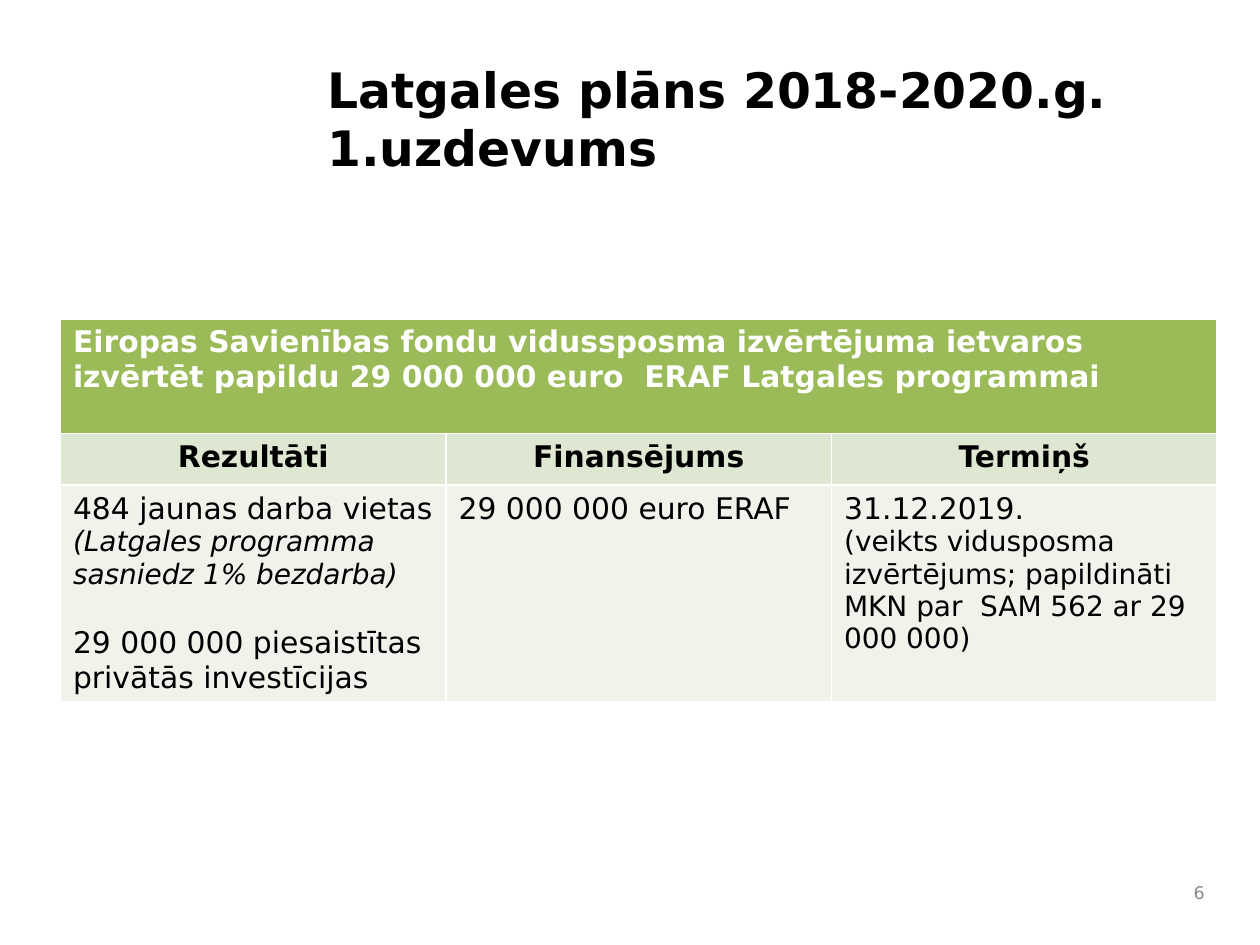
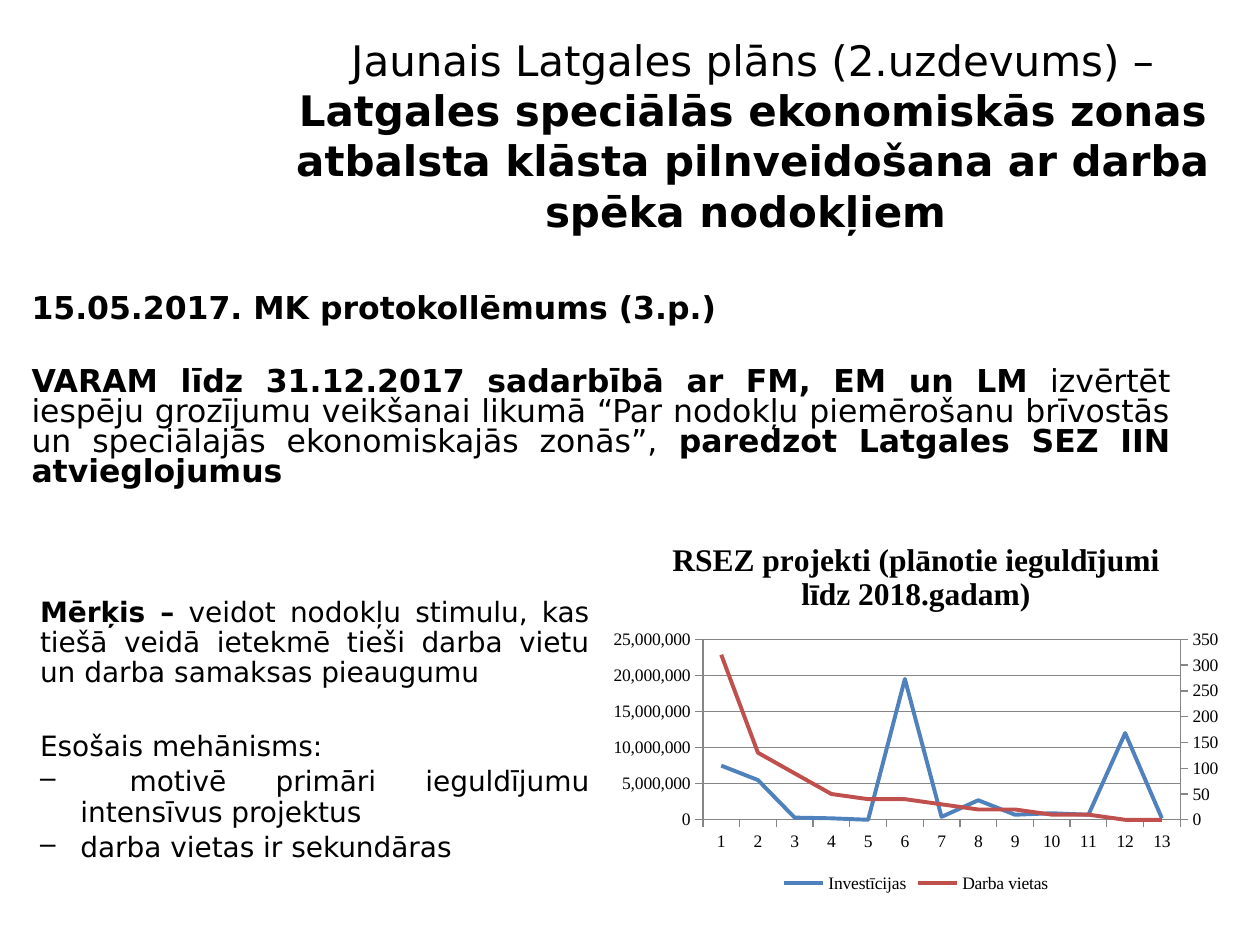
from copy import deepcopy

from lxml import etree
from pptx import Presentation
from pptx.chart.data import CategoryChartData
from pptx.dml.color import RGBColor
from pptx.enum.chart import XL_CHART_TYPE, XL_LEGEND_POSITION, XL_TICK_MARK
from pptx.enum.text import MSO_ANCHOR, MSO_AUTO_SIZE, PP_ALIGN
from pptx.oxml.ns import qn
from pptx.util import Inches, Pt

LINE_CHART = XL_CHART_TYPE.LINE
LEGEND_BOTTOM = XL_LEGEND_POSITION.BOTTOM
TICK_OUT = XL_TICK_MARK.OUTSIDE
TOP, MIDDLE = MSO_ANCHOR.TOP, MSO_ANCHOR.MIDDLE
NO_AUTOFIT = MSO_AUTO_SIZE.NONE
LEFT, CENTER, RIGHT, JUSTIFY = (
    PP_ALIGN.LEFT, PP_ALIGN.CENTER, PP_ALIGN.RIGHT, PP_ALIGN.JUSTIFY)

BLACK = RGBColor(0x00, 0x00, 0x00)
WHITE = RGBColor(0xFF, 0xFF, 0xFF)
GREY = RGBColor(0x89, 0x89, 0x89)
AXIS_GREY = RGBColor(0x86, 0x86, 0x86)
GREEN = RGBColor(0x9B, 0xBB, 0x59)
GREEN_LIGHT = RGBColor(0xDE, 0xE7, 0xD1)
GREEN_PALE = RGBColor(0xEF, 0xF3, 0xEA)
BLUE = RGBColor(0x4F, 0x81, 0xBD)
RED = RGBColor(0xC0, 0x50, 0x4D)

TEXT_FONT = "DejaVu Sans"
CHART_FONT = "Times New Roman"
BREAK = "\n"


def set_font(font, size, color=BLACK, bold=False, italic=False, name=TEXT_FONT):
    font.name, font.size = name, Pt(size)
    font.bold, font.italic = bold, italic
    font.color.rgb = color


def set_marker(paragraph, bullet, indent):
    """Give the paragraph a hanging bullet, or none."""
    properties = paragraph._p.get_or_add_pPr()
    properties.set("marL", str(Inches(indent) if bullet else 0))
    properties.set("indent", str(-Inches(indent) if bullet else 0))
    if bullet:
        etree.SubElement(properties, qn("a:buChar"), char=bullet)
    else:
        etree.SubElement(properties, qn("a:buNone"))


def add_text(frame, *runs, align=LEFT, spacing=1.0, before=0, bullet=None,
             indent=0.32, **font):
    """Add one paragraph; a run is a string or a (string, font changes) pair."""
    first = frame.paragraphs[0]
    paragraph = frame.add_paragraph() if first.runs else first
    set_marker(paragraph, bullet, indent)
    paragraph.alignment = align
    paragraph.line_spacing = spacing
    paragraph.space_before = Pt(before)
    for run in runs:
        words, changes = (run, {}) if isinstance(run, str) else run
        if words == BREAK:
            paragraph.add_line_break()
            continue
        piece = paragraph.add_run()
        piece.text = words
        set_font(piece.font, **{**font, **changes})


def place(shape, left, top, width, height, anchor=TOP):
    """Put a text shape in its place and return its text frame."""
    shape.left, shape.top = Inches(left), Inches(top)
    shape.width, shape.height = Inches(width), Inches(height)
    frame = shape.text_frame
    frame.word_wrap = True
    frame.auto_size = NO_AUTOFIT
    frame.vertical_anchor = anchor
    return frame


def add_box(slide, *bounds, anchor=TOP):
    return place(slide.shapes.add_textbox(0, 0, 0, 0), *bounds, anchor=anchor)


def fill_cell(cell, background, *paragraphs, **style):
    """Fill a cell; a paragraph is a (runs, format changes) pair."""
    cell.fill.solid()
    cell.fill.fore_color.rgb = background
    for runs, changes in paragraphs:
        add_text(cell.text_frame, *runs, **{"size": 17, **style, **changes})


def add_task_table(slide):
    columns, heights = 3, (0.91, 0.41, 1.71)
    table = slide.shapes.add_table(
        len(heights), columns, Inches(0.48), Inches(2.53),
        Inches(9.18), Inches(sum(heights))).table
    for row, height in zip(table.rows, heights):
        row.height = Inches(height)

    # Task across the full width
    task = table.cell(0, 0)
    task.merge(table.cell(0, columns - 1))
    fill_cell(task, GREEN, ([
        "Eiropas Savienības fondu vidussposma izvērtējuma ietvaros "
        "izvērtēt papildu 29 000 000 euro  ERAF Latgales programmai"], {}),
        color=WHITE, bold=True)

    # Column heads and their contents
    details = {
        "Rezultāti": [
            (["484 jaunas darba vietas ",
              ("(Latgales programma sasniedz 1% bezdarba)",
               {"size": 16, "italic": True})], {}),
            (["29 000 000 piesaistītas privātās investīcijas"], {"before": 20}),
        ],
        "Finansējums": [(["29 000 000 euro ERAF"], {})],
        "Termiņš": [
            (["31.12.2019."], {}),
            (["(veikts vidusposma izvērtējums; papildināti MKN par  "
              "SAM 562 ar 29 000 000)"], {"size": 16}),
        ],
    }
    for column, (head, paragraphs) in enumerate(details.items()):
        fill_cell(table.cell(1, column), GREEN_LIGHT, ([head], {}),
                  align=CENTER, bold=True)
        fill_cell(table.cell(2, column), GREEN_PALE, *paragraphs)


def move_to_right_axis(chart):
    """Draw the last series against a second value axis on the right."""
    plot_area = chart._chartSpace.chart.plotArea
    left_plot = plot_area.find(qn("c:lineChart"))
    right_plot = deepcopy(left_plot)
    left_plot.remove(left_plot.findall(qn("c:ser"))[-1])
    for series in right_plot.findall(qn("c:ser"))[:-1]:
        right_plot.remove(series)
    left_plot.addnext(right_plot)

    category_axis = deepcopy(plot_area.find(qn("c:catAx")))
    value_axis = deepcopy(plot_area.find(qn("c:valAx")))
    for axis, own, other in ((category_axis, "50", "60"),
                             (value_axis, "60", "50")):
        axis.find(qn("c:axId")).set("val", own)
        axis.find(qn("c:crossAx")).set("val", other)
    for axis_id, value in zip(right_plot.findall(qn("c:axId")), ("50", "60")):
        axis_id.set("val", value)

    category_axis.find(qn("c:delete")).set("val", "1")
    value_axis.remove(value_axis.find(qn("c:majorGridlines")))
    value_axis.find(qn("c:axPos")).set("val", "r")
    value_axis.find(qn("c:numFmt")).set("formatCode", "General")
    value_axis.find(qn("c:crosses")).set("val", "max")
    plot_area.findall(qn("c:valAx"))[-1].addnext(value_axis)
    value_axis.addnext(category_axis)


def add_project_chart(slide):
    data = CategoryChartData()
    data.categories = [str(project) for project in range(1, 14)]
    data.add_series("Investīcijas", (
        7500000, 5500000, 300000, 200000, 0, 19500000, 400000,
        2700000, 700000, 900000, 700000, 12000000, 200000))
    data.add_series("Darba vietas", (
        320, 130, 90, 50, 40, 40, 30, 20, 20, 10, 10, 0, 0))
    chart = slide.shapes.add_chart(
        LINE_CHART, Inches(4.77), Inches(4.13), Inches(5), Inches(3),
        data).chart
    set_font(chart.font, 10, name=CHART_FONT)

    # Title and legend
    chart.has_title = True
    add_text(chart.chart_title.text_frame,
             "RSEZ projekti (plānotie ieguldījumi līdz 2018.gadam)",
             align=CENTER, size=18, bold=True, name=CHART_FONT)
    chart.has_legend = True
    chart.legend.position = LEGEND_BOTTOM
    chart.legend.include_in_layout = False

    # Lines and axes
    chart.plots[0].vary_by_categories = False
    for series, color in zip(chart.plots[0].series, (BLUE, RED)):
        series.smooth = False
        series.format.line.color.rgb = color
        series.format.line.width = Pt(2.25)
    for axis in (chart.category_axis, chart.value_axis):
        axis.major_tick_mark = TICK_OUT
        axis.format.line.color.rgb = AXIS_GREY
    chart.value_axis.has_major_gridlines = True
    chart.value_axis.major_gridlines.format.line.color.rgb = AXIS_GREY
    chart.value_axis.tick_labels.number_format = "#,##0"
    chart.value_axis.tick_labels.number_format_is_linked = False
    move_to_right_axis(chart)


def build_first_task(deck):
    slide = deck.slides.add_slide(deck.slide_layouts[5])
    title = place(slide.shapes.title, 2.5, 0.42, 6.67, 1.13)
    add_text(title, "Latgales plāns 2018-2020.g.", BREAK, "1.uzdevums",
             size=27.9, bold=True)
    add_task_table(slide)
    page_number = add_box(slide, 9.33, 6.92, 0.33, 0.33, anchor=MIDDLE)
    add_text(page_number, "6", align=RIGHT, size=10, color=GREY)


def build_second_task(deck):
    slide = deck.slides.add_slide(deck.slide_layouts[1])
    title = place(slide.shapes.title, 2.19, 0.22, 7.57, 1.57)
    add_text(title, "Jaunais Latgales plāns (2.uzdevums) – ",
             ("Latgales speciālās ekonomiskās zonas atbalsta klāsta "
              "pilnveidošana ar darba spēka nodokļiem ", {"bold": True}),
             align=CENTER, size=24)

    # Government decision
    decision = place(slide.placeholders[1], 0.15, 2.29, 9.24, 1.84)
    decision_style = {"align": JUSTIFY, "spacing": 0.8, "size": 18, "bold": True}
    add_text(decision, "15.05.2017. MK protokollēmums (3.p.)", **decision_style)
    add_text(decision, "VARAM līdz 31.12.2017 sadarbībā ar FM, EM un LM",
             (" izvērtēt iespēju grozījumu veikšanai likumā “Par nodokļu "
              "piemērošanu brīvostās un speciālajās ekonomiskajās zonās”, ",
              {"bold": False}),
             "paredzot Latgales SEZ IIN atvieglojumus",
             before=24.5, **decision_style)

    add_project_chart(slide)

    # Goal and present mechanism
    goal = add_box(slide, 0.22, 4.7, 4.56, 2.19)
    goal_style = {"align": JUSTIFY, "spacing": 0.9, "size": 16}
    add_text(goal, ("Mērķis –", {"bold": True}),
             " veidot nodokļu stimulu, kas tiešā veidā ietekmē tieši darba "
             "vietu un darba samaksas pieaugumu", **goal_style)
    add_text(goal, "Esošais mehānisms:", before=24.5, **goal_style)
    for effect in (" motivē primāri ieguldījumu intensīvus projektus",
                   "darba vietas ir sekundāras"):
        add_text(goal, effect, bullet="–", before=3.2, **goal_style)


def main():
    deck = Presentation()
    deck.slide_width, deck.slide_height = Inches(10), Inches(7.5)
    build_first_task(deck)
    build_second_task(deck)
    deck.save("out.pptx")


if __name__ == "__main__":
    main()
